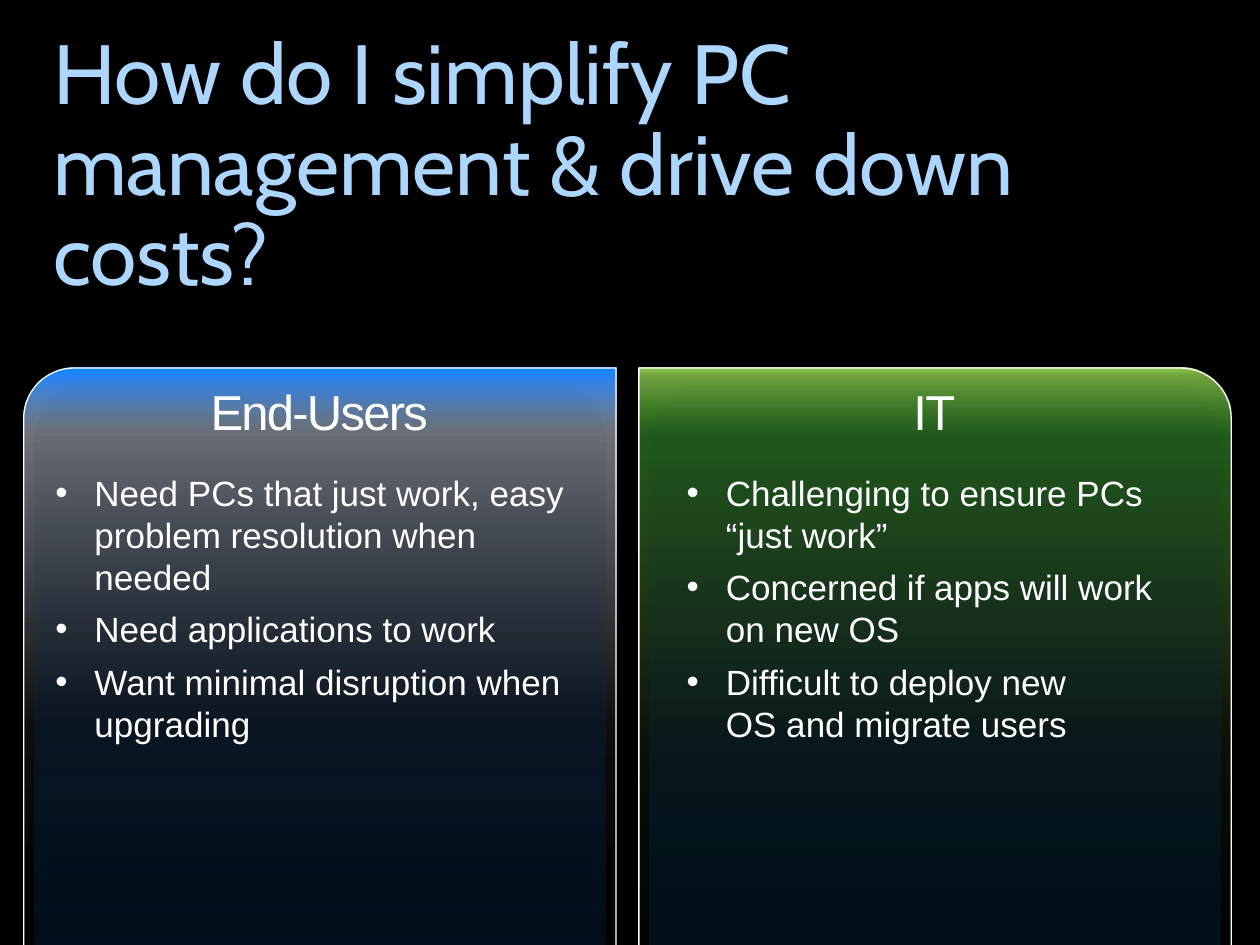
from lxml import etree
from pptx import Presentation
from pptx.dml.color import RGBColor
from pptx.enum.shapes import MSO_SHAPE as SHAPE
from pptx.enum.text import MSO_ANCHOR as ANCHOR, MSO_AUTO_SIZE as AUTO, PP_ALIGN as ALIGN
from pptx.oxml.ns import qn
from pptx.util import Cm, Pt

rgb = RGBColor.from_string


def add_run(p, text, size, colour, font="Arial"):
    r = p.add_run()
    r.text = text
    r.font.name, r.font.size, r.font.bold = font, Pt(size), False
    r.font.color.rgb = rgb(colour)
    return r


def set_gradient(sp, stops, angle):
    """Fill with (position %, colour, opacity %) stops."""
    sp.fill.background()
    old = sp._element.spPr.find(qn("a:noFill"))
    grad = etree.Element(qn("a:gradFill"), rotWithShape="1")
    gs_lst = etree.SubElement(grad, qn("a:gsLst"))
    for pos, colour, alpha in stops:
        gs = etree.SubElement(gs_lst, qn("a:gs"), pos=str(pos * 1000))
        clr = etree.SubElement(gs, qn("a:srgbClr"), val=colour)
        etree.SubElement(clr, qn("a:alpha"), val=str(alpha * 1000))
    etree.SubElement(grad, qn("a:lin"), ang=str(angle * 60000), scaled="0")
    old.getparent().replace(old, grad)


prs = Presentation()
prs.slide_width, prs.slide_height = Cm(25.4), Cm(19.05)
s = prs.slides.add_slide(prs.slide_layouts[4])
s.background.fill.solid()
s.background.fill.fore_color.rgb = rgb("000000")
title, *bodies = s.placeholders

# Title
title.left, title.top, title.width, title.height = Cm(1.07), Cm(0.64), Cm(23.29), Cm(5.54)
tf = title.text_frame
tf.margin_left = tf.margin_top = tf.margin_right = tf.margin_bottom = 0
tf.vertical_anchor, tf.auto_size, tf.word_wrap = ANCHOR.TOP, AUTO.NONE, True
p = tf.paragraphs[0]
p.alignment, p.line_spacing = ALIGN.LEFT, 0.9
add_run(p, "How do I simplify PC management & drive down costs?", 48, "ADD6FF", "Cabin")

# Panels: left edge, height, mirrored, gradient, heading, list left, list width, points
panels = [
    (0.48, 14.35, True,
     [(0, "0E8AFA", 100), (1, "2384F9", 100), (9, "AAADB8", 65), (50, "AAADB8", 8),
      (100, "000000", 0)],
     "End-Users", 0.86, 10.82,
     ["Need PCs that just work, easy problem resolution when needed",
      "Need applications to work",
      "Want minimal disruption when upgrading"]),
    (12.88, 15.06, False,
     [(0, "92D050", 100), (1, "92D050", 78), (9, "45BD35", 48), (50, "92D050", 8),
      (100, "000000", 0)],
     "IT", 13.59, 10.59,
     ["Challenging to ensure PCs “just work”",
      "Concerned if apps will work on new OS",
      "Difficult to deploy new\nOS and migrate users"]),
]
glow = [(0, "003366", 25), (50, "003D7A", 20), (100, "003366", 0)]

for i, (x, height, mirrored, stops, heading, list_x, list_w, points) in enumerate(panels):
    # Outer card
    sp = s.shapes.add_shape(SHAPE.ROUND_1_RECTANGLE, Cm(x), Cm(7.42), Cm(11.94), Cm(height))
    sp.adjustments[0] = 0.085
    sp.shadow.inherit = False
    set_gradient(sp, stops, 90)
    sp.line.color.rgb, sp.line.width = rgb("FFFFFF"), Pt(0.75)
    if mirrored:
        sp._element.spPr.find(qn("a:xfrm")).set("flipH", "1")

    # Inner glow with a soft shadow
    sp = s.shapes.add_shape(SHAPE.ROUND_2_SAME_RECTANGLE, Cm(x + 0.22), Cm(7.6), Cm(11.5), Cm(15.67))
    sp.adjustments[0], sp.adjustments[1] = 0.118, 0
    sp.line.fill.background()
    set_gradient(sp, glow, 270)
    sp.shadow.inherit = False
    shadow = etree.SubElement(sp._element.spPr.find(qn("a:effectLst")), qn("a:outerShdw"),
                              blurRad=str(Pt(3.1)), dist=str(Pt(1.8)), dir="5400000")
    clr = etree.SubElement(shadow, qn("a:srgbClr"), val="000000")
    etree.SubElement(clr, qn("a:alpha"), val="35000")

    # Text placeholders, brought in front of the card
    head, body = bodies[2 * i:2 * i + 2]
    head.left, head.top, head.width, head.height = Cm(x), Cm(7.57), Cm(11.91), Cm(1.45)
    body.left, body.top, body.width, body.height = Cm(list_x), Cm(9.37), Cm(list_w), Cm(5.82)
    for sp in (head, body):
        s.shapes._spTree.append(sp._element)
        tf = sp.text_frame
        tf.vertical_anchor, tf.auto_size, tf.word_wrap = ANCHOR.TOP, AUTO.NONE, True

    # Heading
    p = head.text_frame.paragraphs[0]
    p.alignment, p.space_before = ALIGN.CENTER, Pt(0)
    r = add_run(p, heading, 28, "FFFFFF")
    r.font._element.set("spc", "-100")

    # Bulleted list
    tf = body.text_frame
    for n, point in enumerate(points):
        p = tf.add_paragraph() if n else tf.paragraphs[0]
        pPr = p._p.get_or_add_pPr()
        pPr.set("marL", str(Cm(0.79)))
        pPr.set("indent", str(-Cm(0.79)))
        etree.SubElement(pPr, qn("a:buChar"), char="•")
        p.space_before = Pt(6 if n else 0)
        for k, line in enumerate(point.split("\n")):
            if k:
                p.add_line_break()
            add_run(p, line, 20, "FFFFFF")

prs.save("out.pptx")
